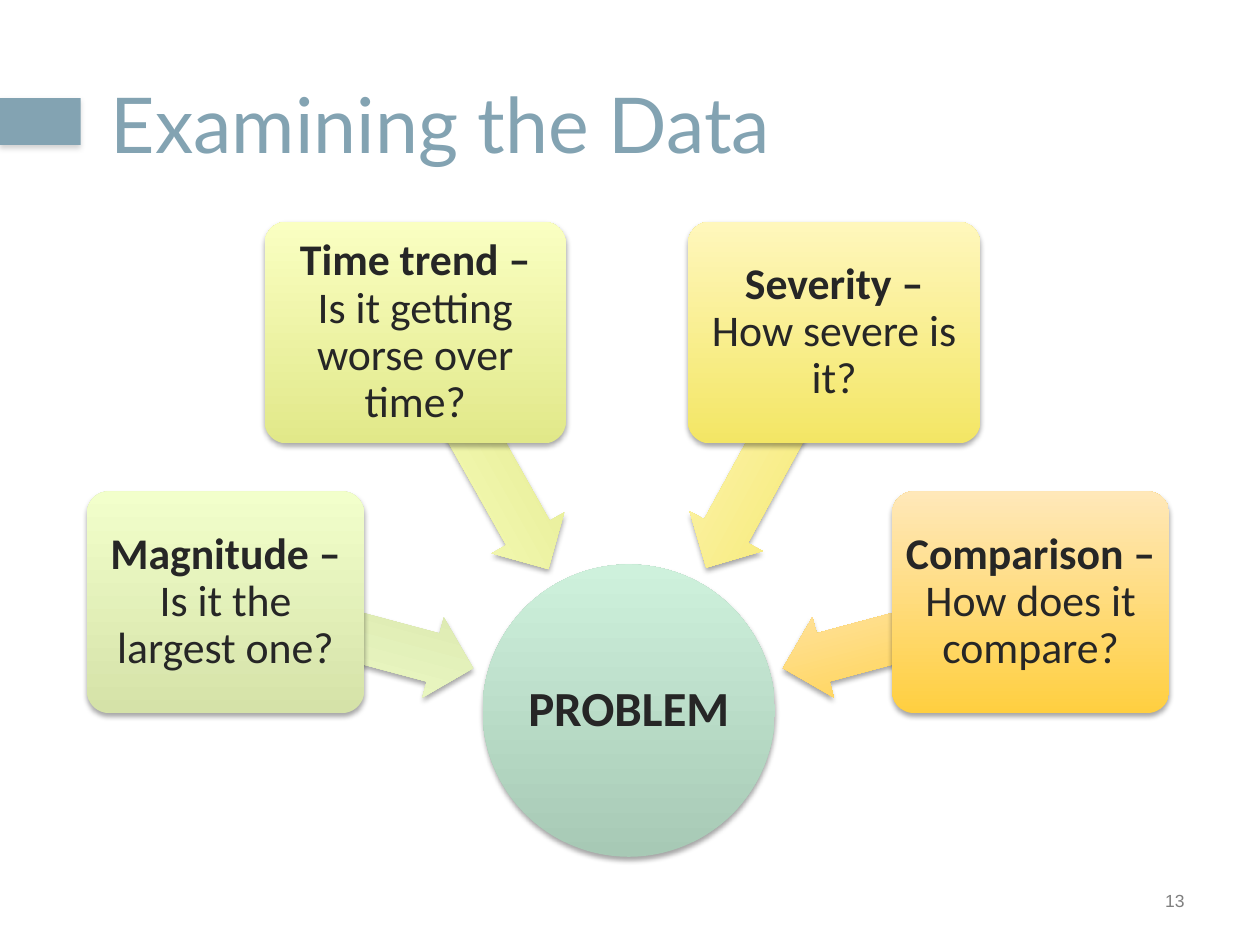
"""Build the slide that surrounds a problem with four questions about the data."""
from dataclasses import dataclass

from lxml.etree import SubElement
from pptx import Presentation
from pptx.dml.color import RGBColor
from pptx.enum.shapes import MSO_SHAPE
from pptx.enum.text import MSO_ANCHOR, PP_ALIGN
from pptx.oxml.ns import qn
from pptx.shapes.autoshape import Shape
from pptx.slide import Slide
from pptx.text.text import TextFrame
from pptx.util import Inches, Pt

ACCENT = RGBColor(0x83, 0xA3, 0xB2)
TEXT = RGBColor(0x26, 0x26, 0x26)
NUMBER = RGBColor(0x7F, 0x7F, 0x7F)
SHADOW_BLACK = RGBColor(0x00, 0x00, 0x00)
SHADOW_GRAY = RGBColor(0x80, 0x80, 0x80)
HUB_DARK = RGBColor(0xA7, 0xC9, 0xB5)
HUB_LIGHT = RGBColor(0xCE, 0xF1, 0xDC)

CARD_HEIGHT = 1.76
ARROW_HEIGHT = 0.66
UPPER_TOP, LOWER_TOP = 1.76, 3.9


@dataclass(frozen=True)
class Question:
    heading: str
    body: str
    left: float
    top: float
    width: float
    arrow_left: float
    arrow_top: float
    arrow_width: float
    arrow_rotation: float
    dark: RGBColor
    light: RGBColor


QUESTIONS = [
    Question("Magnitude –", "Is it the largest one?", 0.69, LOWER_TOP, 2.2,
             1.76, 4.71, 2.03, 195,
             RGBColor(0xD5, 0xE2, 0xA8), RGBColor(0xF2, 0xFF, 0xCB)),
    Question("Time trend –", "Is it getting worse over time?", 2.1, UPPER_TOP, 2.39,
             2.75, 3.25, 2.15, 240.6,
             RGBColor(0xE1, 0xE8, 0x89), RGBColor(0xFA, 0xFF, 0xC2)),
    Question("Severity –", "How severe is it?", 5.46, UPPER_TOP, 2.32,
             5.05, 3.24, 2.13, 298.6,
             RGBColor(0xF3, 0xE6, 0x65), RGBColor(0xFF, 0xF7, 0xBC)),
    Question("Comparison –", "How does it compare?", 7.08, LOWER_TOP, 2.2,
             6.18, 4.71, 2.03, 345,
             RGBColor(0xFF, 0xCF, 0x40), RGBColor(0xFF, 0xE8, 0xB9)),
]


def add_shape(slide: Slide, kind: MSO_SHAPE, left: float, top: float, width: float,
              height: float, shadow_color: RGBColor = SHADOW_BLACK) -> Shape:
    """Add a borderless shape with a soft shadow below it."""
    shape = slide.shapes.add_shape(kind, Inches(left), Inches(top), Inches(width), Inches(height))
    shape.line.fill.background()
    shape.shadow.inherit = False
    effects = shape._element.spPr.find(qn("a:effectLst"))
    shadow = SubElement(effects, qn("a:outerShdw"), blurRad=str(Pt(3.1)), dist=str(Pt(1.8)),
                        dir="5400000", rotWithShape="0")
    color = SubElement(shadow, qn("a:srgbClr"), val=str(shadow_color))
    SubElement(color, qn("a:alpha"), val="35000")
    return shape


def fill_gradient(shape: Shape, dark: RGBColor, light: RGBColor) -> None:
    """Fill a shape from dark at the bottom to light at the top."""
    shape.fill.gradient()
    shape.fill.gradient_angle = 90
    for stop, color in zip(shape.fill.gradient_stops, (dark, light)):
        stop.color.rgb = color


def prepare_text(shape: Shape, inset: float) -> TextFrame:
    """Wrap and centre the text of a shape inside equal insets."""
    frame = shape.text_frame
    frame.word_wrap = True
    frame.vertical_anchor = MSO_ANCHOR.MIDDLE
    frame.margin_left = frame.margin_right = Inches(inset)
    frame.margin_top = frame.margin_bottom = Inches(inset)
    paragraph = frame.paragraphs[0]
    paragraph.alignment = PP_ALIGN.CENTER
    paragraph.line_spacing = 0.9
    paragraph.font.name = "Calibri"
    paragraph.font.color.rgb = TEXT
    return frame


def add_title(slide: Slide) -> None:
    """Add the accent bar and place the title beside it."""
    bar = add_shape(slide, MSO_SHAPE.RECTANGLE, 0, 0.78, 0.64, 0.37, SHADOW_GRAY)
    bar.fill.solid()
    bar.fill.fore_color.rgb = ACCENT
    title = slide.shapes.title
    title.left, title.top = Inches(0), Inches(0.35)
    title.width, title.height = Inches(10), Inches(1.25)
    frame = title.text_frame
    frame.text = "Examining the Data"
    frame.vertical_anchor = MSO_ANCHOR.MIDDLE
    frame.margin_left = Inches(0.88)
    paragraph = frame.paragraphs[0]
    paragraph.alignment = PP_ALIGN.LEFT
    paragraph.font.name = "Lato"
    paragraph.font.size = Pt(44)
    paragraph.font.color.rgb = ACCENT


def add_hub(slide: Slide) -> None:
    """Add the central problem circle."""
    hub = add_shape(slide, MSO_SHAPE.OVAL, 3.83, 4.48, 2.32, 2.32)
    fill_gradient(hub, HUB_DARK, HUB_LIGHT)
    paragraph = prepare_text(hub, 0.02).paragraphs[0]
    paragraph.add_run().text = "PROBLEM"
    paragraph.font.size = Pt(28)
    paragraph.font.bold = True


def add_question(slide: Slide, question: Question) -> None:
    """Add a question card and its arrow towards the problem."""
    arrow = add_shape(slide, MSO_SHAPE.LEFT_ARROW, question.arrow_left, question.arrow_top,
                      question.arrow_width, ARROW_HEIGHT)
    arrow.adjustments[0] = 0.6
    arrow.adjustments[1] = 0.5
    arrow.rotation = question.arrow_rotation
    card = add_shape(slide, MSO_SHAPE.ROUNDED_RECTANGLE, question.left, question.top,
                     question.width, CARD_HEIGHT)
    card.adjustments[0] = 0.1
    for shape in (arrow, card):
        fill_gradient(shape, question.dark, question.light)
    paragraph = prepare_text(card, 0.05).paragraphs[0]
    paragraph.font.size = Pt(25)
    heading = paragraph.add_run()
    heading.text = question.heading
    heading.font.bold = True
    paragraph.add_line_break()
    paragraph.add_run().text = question.body


def add_slide_number(slide: Slide) -> None:
    """Add the slide number at the lower right."""
    box = slide.shapes.add_textbox(Inches(7.17), Inches(6.95), Inches(2.33), Inches(0.4))
    frame = box.text_frame
    frame.word_wrap = True
    frame.vertical_anchor = MSO_ANCHOR.MIDDLE
    frame.text = "13"
    paragraph = frame.paragraphs[0]
    paragraph.alignment = PP_ALIGN.RIGHT
    paragraph.font.name = "Arial"
    paragraph.font.size = Pt(10)
    paragraph.font.color.rgb = NUMBER


def main() -> None:
    """Build and save the presentation."""
    presentation = Presentation()
    presentation.slide_width = Inches(10)
    presentation.slide_height = Inches(7.5)
    slide = presentation.slides.add_slide(presentation.slide_layouts[5])
    add_title(slide)
    add_slide_number(slide)
    add_hub(slide)
    for question in QUESTIONS:
        add_question(slide, question)
    presentation.save("out.pptx")


if __name__ == "__main__":
    main()
